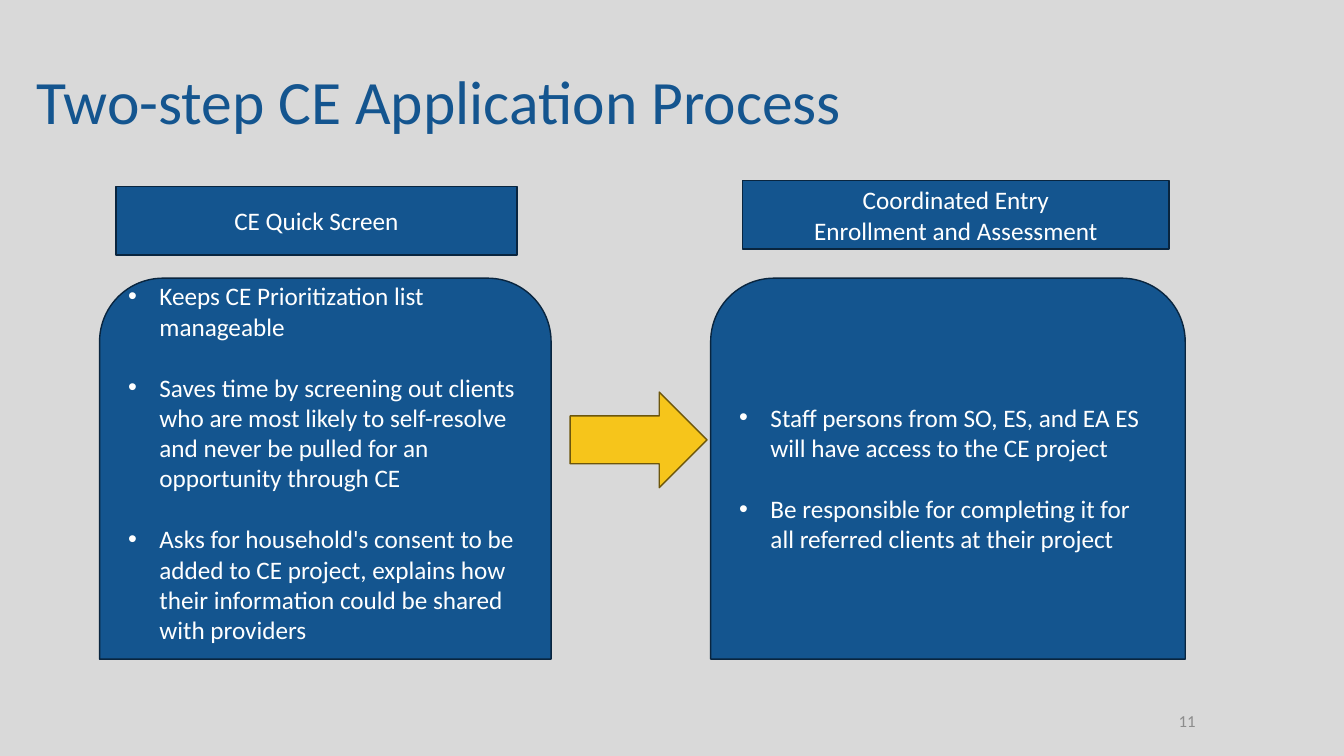
from lxml.etree import SubElement
from pptx import Presentation
from pptx.dml.color import RGBColor
from pptx.enum.shapes import MSO_SHAPE
from pptx.enum.text import MSO_ANCHOR, PP_ALIGN
from pptx.oxml.ns import qn
from pptx.util import Cm, Pt

GRAY = RGBColor(0xD9, 0xD9, 0xD9)
BLUE = RGBColor(0x14, 0x55, 0x8F)
NAVY = RGBColor(0x09, 0x25, 0x3F)
YELLOW = RGBColor(0xF6, 0xC5, 0x1B)
BROWN = RGBColor(0x6C, 0x56, 0x0C)
WHITE = RGBColor(0xFF, 0xFF, 0xFF)
NUMBER_GRAY = RGBColor(0x8C, 0x8C, 0x8C)


class SlideBuilder:
    font = "Calibri"
    body_size = Pt(18)
    bullet_indent = Cm(0.79)
    bullet_gap = Pt(22)

    def __init__(self, prs):
        self.s = prs.slides.add_slide(prs.slide_layouts[6])
        fill = self.s.background.fill
        fill.solid()
        fill.fore_color.rgb = GRAY

    def run(self, p, text, size, color):
        r = p.add_run()
        r.text = text
        r.font.name = self.font
        r.font.size = size
        r.font.color.rgb = color

    def text(self, box, text, size, color, align=PP_ALIGN.LEFT, spacing=1.0):
        sp = self.s.shapes.add_textbox(*map(Cm, box))
        tf = sp.text_frame
        tf.word_wrap = True
        tf.vertical_anchor = MSO_ANCHOR.MIDDLE
        p = tf.paragraphs[0]
        p.alignment = align
        p.line_spacing = spacing
        self.run(p, text, size, color)

    def shape(self, kind, box, fill=BLUE, line=NAVY):
        sp = self.s.shapes.add_shape(kind, *map(Cm, box))
        sp.shadow.inherit = False
        sp.fill.solid()
        sp.fill.fore_color.rgb = fill
        sp.line.color.rgb = line
        sp.line.width = Pt(1)
        sp.text_frame.vertical_anchor = MSO_ANCHOR.MIDDLE
        return sp

    def header(self, box, lines):
        sp = self.shape(MSO_SHAPE.RECTANGLE, box)
        p = sp.text_frame.paragraphs[0]
        p.alignment = PP_ALIGN.CENTER
        for i, line in enumerate(lines):
            if i:
                p.add_line_break()
            self.run(p, line, self.body_size, WHITE)

    def panel(self, box, bullets, bottom=Cm(0.13)):
        sp = self.shape(MSO_SHAPE.ROUND_2_SAME_RECTANGLE, box)
        tf = sp.text_frame
        tf.word_wrap = True
        tf.margin_bottom = bottom
        for i, bullet in enumerate(bullets):
            p = tf.add_paragraph() if i else tf.paragraphs[0]
            p.alignment = PP_ALIGN.LEFT
            if i:
                p.space_before = self.bullet_gap
            pPr = p._p.get_or_add_pPr()
            pPr.set("marL", str(self.bullet_indent))
            pPr.set("indent", str(-self.bullet_indent))
            SubElement(pPr, qn("a:buFont")).set("typeface", "Arial")
            SubElement(pPr, qn("a:buChar")).set("char", "•")
            self.run(p, bullet, self.body_size, WHITE)


def main():
    prs = Presentation()
    prs.slide_width, prs.slide_height = Cm(33.87), Cm(19.05)
    slide = SlideBuilder(prs)

    # Title and slide number
    slide.text((0.66, 0.79, 29.21, 3.68), "Two-step CE Application Process",
               Pt(44), BLUE, spacing=0.9)
    slide.text((23.93, 17.65, 6.45, 1.02), "11", Pt(12), NUMBER_GRAY,
               align=PP_ALIGN.RIGHT)

    # Step panels; the fuller left one sits a little higher
    slide.panel((2.51, 7.01, 11.38, 9.6), [
        "Keeps CE Prioritization list manageable",
        "Saves time by screening out clients who are most likely to "
        "self-resolve and never be pulled for an opportunity through CE",
        "Asks for household's consent to be added to CE project, explains "
        "how their\u00a0information could be shared with providers",
    ], bottom=Cm(0.9))
    slide.panel((17.91, 7.01, 11.96, 9.6), [
        "Staff persons from SO, ES, and EA ES will have access to the CE project",
        "Be responsible for completing it for all referred clients at their project",
    ])

    # Arrow between the steps
    slide.shape(MSO_SHAPE.RIGHT_ARROW, (14.37, 9.88, 3.45, 2.41), YELLOW, BROWN)

    # Step headers
    slide.header((2.92, 4.7, 10.11, 1.73), ["CE Quick Screen"])
    slide.header((18.72, 4.55, 10.74, 1.73),
                 ["Coordinated Entry", "Enrollment and Assessment"])

    prs.save("out.pptx")


if __name__ == "__main__":
    main()
